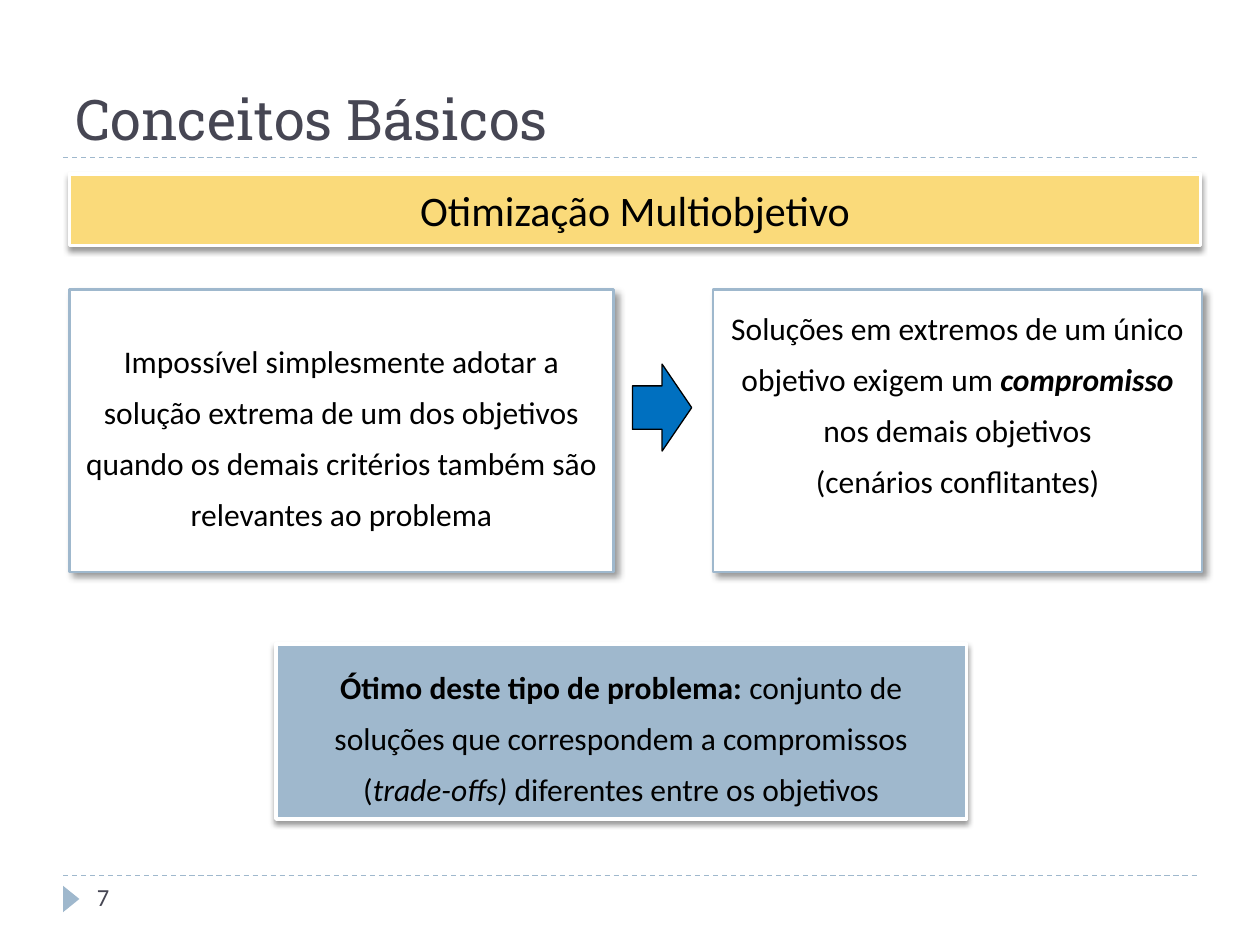
import lxml.etree
import pptx
import pptx.dml.color
import pptx.enum.dml
import pptx.enum.shapes
import pptx.enum.text
import pptx.oxml.ns
import pptx.util

Inches = pptx.util.Inches
Pt = pptx.util.Pt
KIND = pptx.enum.shapes.MSO_SHAPE
ANCHOR = pptx.enum.text.MSO_ANCHOR
ALIGN = pptx.enum.text.PP_ALIGN

BLUE, WHITE, BLACK, SLATE = "9FB8CD", "FFFFFF", "000000", "464653"
SIDE = {"blur": 4, "dist": 3, "angle": 45}
DOWN = {"blur": 3, "dist": 2, "angle": 90}
BODY = {"size": Pt(18), "name": "Calibri"}
LOOSE = {"alignment": ALIGN.CENTER, "line_spacing": 1.35}


def color(code):
    return pptx.dml.color.RGBColor.from_string(code)


def assign(target, values):
    for name, value in values.items():
        setattr(target, name, value)


def node(parent, tag, **attrs):
    item = lxml.etree.SubElement(parent, pptx.oxml.ns.qn(tag))
    for name, value in attrs.items():
        item.set(name, str(value))
    return item


def shade(shape, blur, dist, angle):
    """Give the shape a black outer shadow at 40 % opacity."""
    shape.shadow.inherit = False
    effects = shape._element.spPr.find(pptx.oxml.ns.qn("a:effectLst"))
    outer = node(effects, "a:outerShdw", blurRad=Pt(blur), dist=Pt(dist),
                 dir=angle * 60000, algn="ctr", rotWithShape=0)
    tone = node(outer, "a:srgbClr", val=BLACK)
    node(tone, "a:alpha", val=40000)


def add_rule(slide, top):
    rule = slide.shapes.add_connector(
        pptx.enum.shapes.MSO_CONNECTOR.STRAIGHT,
        Inches(0.5), Inches(top), Inches(9.5), Inches(top))
    rule.line.color.rgb = color(BLUE)
    assign(rule.line, {"width": Pt(0.75),
                       "dash_style": pptx.enum.dml.MSO_LINE.DASH})
    node(rule._element.spPr, "a:effectLst")


def add_form(slide, kind, place, fill, line=None, width=0, turn=0):
    form = slide.shapes.add_shape(kind, *map(Inches, place))
    form.shadow.inherit = False
    form.rotation = turn
    form.fill.solid()
    form.fill.fore_color.rgb = color(fill)
    if line:
        form.line.color.rgb = color(line)
        form.line.width = Pt(width)
    else:
        form.line.fill.background()
    return form


def write(shape, paras, font, tone=BLACK, layout=None, anchor=ANCHOR.MIDDLE):
    """Fill the shape with paragraphs, each a list of (text, style) runs."""
    frame = shape.text_frame
    assign(frame, {"word_wrap": True, "vertical_anchor": anchor})
    for index, runs in enumerate(paras):
        para = frame.add_paragraph() if index else frame.paragraphs[0]
        assign(para, layout or {"alignment": ALIGN.LEFT})
        for text, style in runs:
            run = para.add_run()
            run.text = text
            assign(run.font, {**font, **style})
            run.font.color.rgb = color(tone)


def add_label(slide, place, text, font, anchor):
    label = slide.shapes.add_textbox(*map(Inches, place))
    write(label, [[(text, {})]], font, SLATE, anchor=anchor)


def add_panel(slide, place, fill, line, width, shadow, paras, **text):
    panel = add_form(slide, KIND.RECTANGLE, place, fill, line, width)
    shade(panel, **shadow)
    write(panel, paras, **{"font": BODY, "layout": LOOSE, **text})


def main():
    deck = pptx.Presentation()
    assign(deck, {"slide_width": Inches(10), "slide_height": Inches(7.5)})
    slide = deck.slides.add_slide(deck.slide_layouts[6])

    for top in (6.95, 1.25):
        add_rule(slide, top)
    add_form(slide, KIND.ISOSCELES_TRIANGLE, (0.46, 7.07, 0.21, 0.13),
             BLUE, turn=90)
    add_label(slide, (0.5, 0.17, 9, 1.08), "Conceitos Básicos",
              {"size": Pt(32), "name": "Roboto Slab"}, ANCHOR.BOTTOM)

    add_panel(slide, (0.55, 2.3, 4.32, 2.24), WHITE, BLUE, 1.5, SIDE, [[
        ("Impossível simplesmente adotar a solução extrema de um dos "
         "objetivos quando os demais critérios também são relevantes "
         "ao problema", {})]])
    add_panel(slide, (5.66, 2.3, 3.88, 2.24), WHITE, BLUE, 1.5, SIDE, [
        [("Soluções em extremos de um único objetivo exigem um ", {}),
         ("compromisso", {"bold": True, "italic": True}),
         (" nos demais objetivos", {})],
        [("(cenários conflitantes)", {})]], anchor=ANCHOR.TOP)
    add_form(slide, KIND.DOWN_ARROW, (4.91, 3, 0.69, 0.47),
             "0070C0", BLACK, 0.75, turn=270)

    add_panel(slide, (0.55, 1.38, 8.98, 0.57), "FADA7A", WHITE, 2, DOWN,
              [[("Otimização Multiobjetivo", {"size": Pt(24)})]],
              layout={"alignment": ALIGN.CENTER})
    add_panel(slide, (2.19, 5.11, 5.48, 1.39), BLUE, WHITE, 2, DOWN, [[
        ("Ótimo deste tipo de problema:", {"bold": True}),
        (" conjunto de soluções que correspondem a compromissos (", {}),
        ("trade-offs) ", {"italic": True}),
        ("diferentes entre os objetivos", {})]])
    add_label(slide, (0.67, 6.95, 2.17, 0.4), "7",
              {"size": Pt(14), "name": "Calibri"}, ANCHOR.TOP)

    deck.save("out.pptx")


if __name__ == "__main__":
    main()
